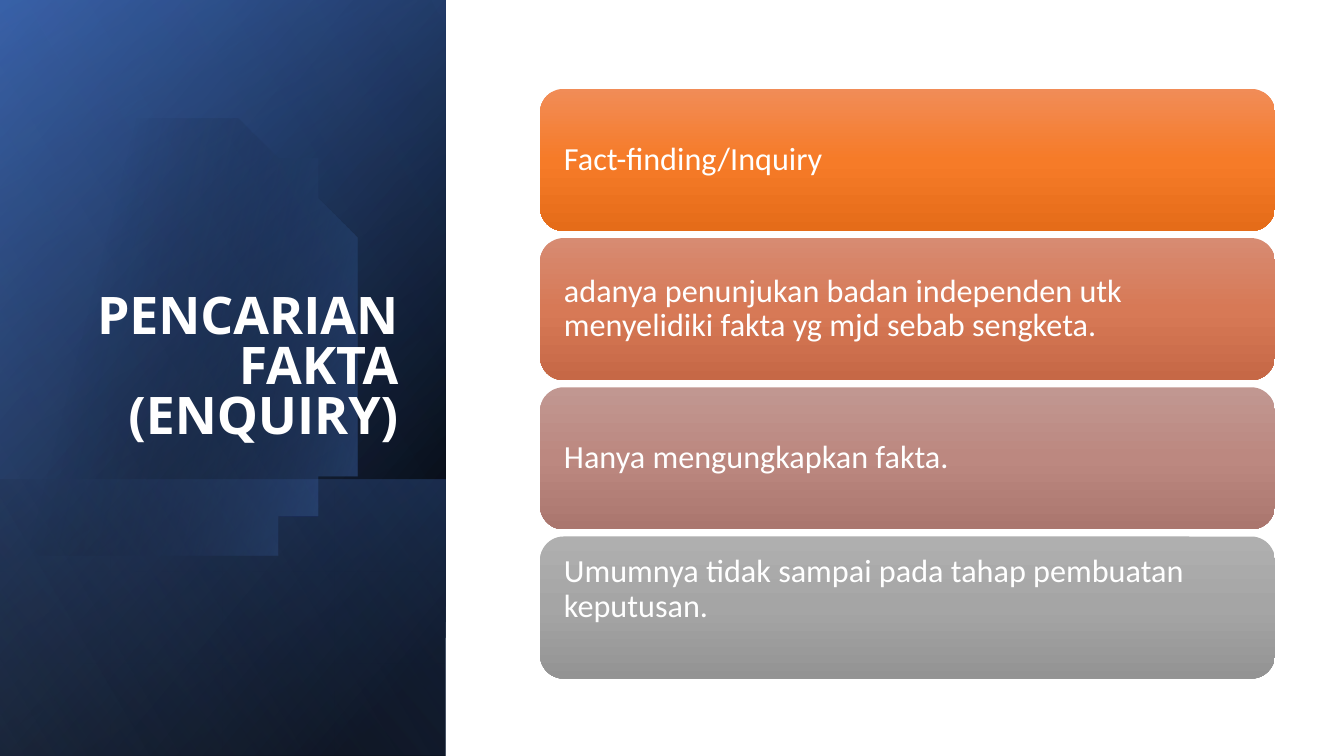
from dataclasses import dataclass

from lxml import etree
from pptx import Presentation
from pptx.dml.color import RGBColor
from pptx.enum.shapes import MSO_SHAPE
from pptx.enum.text import MSO_ANCHOR, MSO_AUTO_SIZE, PP_ALIGN
from pptx.oxml.ns import qn
from pptx.util import Cm, Pt

RECT, ROUND_RECT = MSO_SHAPE.RECTANGLE, MSO_SHAPE.ROUNDED_RECTANGLE
LEFT, RIGHT = PP_ALIGN.LEFT, PP_ALIGN.RIGHT
MIDDLE, BOTTOM = MSO_ANCHOR.MIDDLE, MSO_ANCHOR.BOTTOM
NO_FIT = MSO_AUTO_SIZE.NONE

BLACK = RGBColor(0x00, 0x00, 0x00)
WHITE = RGBColor(0xFF, 0xFF, 0xFF)
BLUE = RGBColor(0x44, 0x72, 0xC4)
DARK_BLUE = RGBColor(0x2F, 0x55, 0x97)
LIGHT_BLUE = RGBColor(0x8F, 0xAA, 0xDC)
ORANGE = (RGBColor(0xF1, 0x8C, 0x57), RGBColor(0xF6, 0x7B, 0x28), RGBColor(0xE5, 0x6C, 0x19))
TERRACOTTA = (RGBColor(0xD7, 0x8B, 0x72), RGBColor(0xD7, 0x79, 0x56), RGBColor(0xC6, 0x68, 0x46))
ROSE = (RGBColor(0xC1, 0x97, 0x91), RGBColor(0xBC, 0x88, 0x80), RGBColor(0xAA, 0x76, 0x6E))
GREY = (RGBColor(0xAF, 0xAF, 0xAF), RGBColor(0xA5, 0xA5, 0xA5), RGBColor(0x93, 0x93, 0x93))

# Lengths in centimetres
SLIDE_W, SLIDE_H = 33.87, 19.05
PANEL_W = 11.23
CARD_LEFT, CARD_TOP, CARD_W, CARD_H, CARD_PITCH = 13.61, 2.24, 18.52, 3.58, 3.76
CARD_INSET = 0.43


@dataclass(frozen=True)
class Stop:
    position: int
    color: RGBColor
    alpha: int = 100


@dataclass(frozen=True)
class Panel:
    top: float
    angle: int
    stops: tuple[Stop, ...]


@dataclass(frozen=True)
class Card:
    text: str
    colors: tuple[RGBColor, ...]
    extra_bottom: float = 0


BASE_PANELS = (
    Panel(0, 50, (Stop(8, BLACK), Stop(100, DARK_BLUE))),
    Panel(0, 30, (Stop(0, BLACK, 0), Stop(99, BLUE, 46))),
    Panel(12.09, 130, (Stop(2, BLUE, 29), Stop(100, BLACK, 30))),
)
TOP_PANEL = Panel(0, 120, (Stop(0, BLACK, 0), Stop(99, LIGHT_BLUE, 11)))
DISC_STOPS = (Stop(29, BLACK, 0), Stop(100, BLUE, 43))

# Disc outline: each curve is two control points and an end point
DISC_START = (3.78, 2.79)
DISC_RIGHT = (
    ((6.25, 2.84), (8.51, 4.50), (9.22, 6.99)),
    ((10.11, 10.08), (8.33, 13.28), (5.26, 14.17)),
    ((3.33, 14.73), (1.35, 14.25), (-0.08, 13.06)),
)
DISC_CUT = [(-0.38, 12.78), (-0.38, 4.45), (0, 4.09)]
DISC_LEFT = (
    ((0.58, 3.61), (1.27, 3.25), (2.03, 3.02)),
    ((2.62, 2.87), (3.20, 2.79), DISC_START),
)

CARDS = (
    Card("Fact-finding/Inquiry", ORANGE),
    Card("adanya penunjukan badan independen utk menyelidiki fakta yg mjd sebab sengketa.",
         TERRACOTTA),
    Card("Hanya mengungkapkan fakta.", ROSE),
    Card("Umumnya tidak sampai pada tahap pembuatan keputusan.", GREY, extra_bottom=0.9),
)


def paint(sp, stops: tuple[Stop, ...], angle: int) -> None:
    """Fill with a linear gradient, its angle measured clockwise."""
    sp.shadow.inherit = False
    sp.line.fill.background()
    sp.fill.gradient()
    sp.fill.gradient_angle = 360 - angle
    stop_list = sp.element.spPr.find(qn("a:gradFill")).find(qn("a:gsLst"))
    for old in list(stop_list):
        stop_list.remove(old)
    for stop in stops:
        gs = etree.SubElement(stop_list, qn("a:gs"), pos=str(stop.position * 1000))
        color = etree.SubElement(gs, qn("a:srgbClr"), val=str(stop.color))
        if stop.alpha < 100:
            etree.SubElement(color, qn("a:alpha"), val=str(stop.alpha * 1000))


def add_panel(shapes, panel: Panel) -> None:
    """Draw a mirrored rectangle turned a quarter, from its top to the slide foot."""
    height = SLIDE_H - panel.top
    left = (PANEL_W - height) / 2
    top = panel.top + (height - PANEL_W) / 2
    sp = shapes.add_shape(RECT, Cm(left), Cm(top), Cm(height), Cm(PANEL_W))
    sp.rotation = 90
    sp.element.spPr.xfrm.set("flipH", "1")
    paint(sp, panel.stops, panel.angle)


def curve_points(start: tuple, curves: tuple, steps: int = 24) -> list[tuple]:
    points = []
    for c1, c2, end in curves:
        for i in range(1, steps + 1):
            t = i / steps
            u = 1 - t
            points.append(tuple(
                u**3 * a + 3 * u * u * t * b + 3 * u * t * t * c + t**3 * d
                for a, b, c, d in zip(start, c1, c2, end)))
        start = end
    return points


def add_disc(shapes) -> None:
    points = (curve_points(DISC_START, DISC_RIGHT) + DISC_CUT
              + curve_points(DISC_CUT[-1], DISC_LEFT))
    builder = shapes.build_freeform(*DISC_START, scale=float(Cm(1)))
    builder.add_line_segments(points, close=True)
    paint(builder.convert_to_shape(), DISC_STOPS, 14)


def write(tf, text: str, font: str, size: int, align, spacing: float, bold: bool = False) -> None:
    tf.word_wrap = True
    tf.auto_size = NO_FIT
    p = tf.paragraphs[0]
    p.alignment = align
    p.line_spacing = spacing
    r = p.add_run()
    r.text = text
    r.font.name = font
    r.font.size = Pt(size)
    r.font.bold = bold
    r.font.color.rgb = WHITE


def add_card(shapes, card: Card, top: float) -> None:
    sp = shapes.add_shape(ROUND_RECT, Cm(CARD_LEFT), Cm(top), Cm(CARD_W), Cm(CARD_H))
    paint(sp, tuple(Stop(i * 50, c) for i, c in enumerate(card.colors)), 90)
    tf = sp.text_frame
    tf.vertical_anchor = MIDDLE
    tf.margin_left = tf.margin_right = tf.margin_top = Cm(CARD_INSET)
    tf.margin_bottom = Cm(CARD_INSET + card.extra_bottom)
    write(tf, card.text, "Calibri", 23, LEFT, 0.9)


def main() -> None:
    prs = Presentation()
    prs.slide_width, prs.slide_height = Cm(SLIDE_W), Cm(SLIDE_H)
    slide = prs.slides.add_slide(prs.slide_layouts[5])
    shapes = slide.shapes

    # Blue side panel
    for panel in BASE_PANELS:
        add_panel(shapes, panel)
    add_disc(shapes)
    add_panel(shapes, TOP_PANEL)

    # Title, brought in front of the panel
    title = shapes.title
    title.left, title.top, title.width, title.height = Cm(1.63), Cm(4.67), Cm(8.66), Cm(6.65)
    title.text_frame.vertical_anchor = BOTTOM
    write(title.text_frame, "PENCARIAN FAKTA (ENQUIRY)", "Open Sans", 37, RIGHT, 0.8, bold=True)
    title.element.getparent().append(title.element)

    # Cards
    for i, card in enumerate(CARDS):
        add_card(shapes, card, CARD_TOP + i * CARD_PITCH)

    prs.save("out.pptx")


if __name__ == "__main__":
    main()
